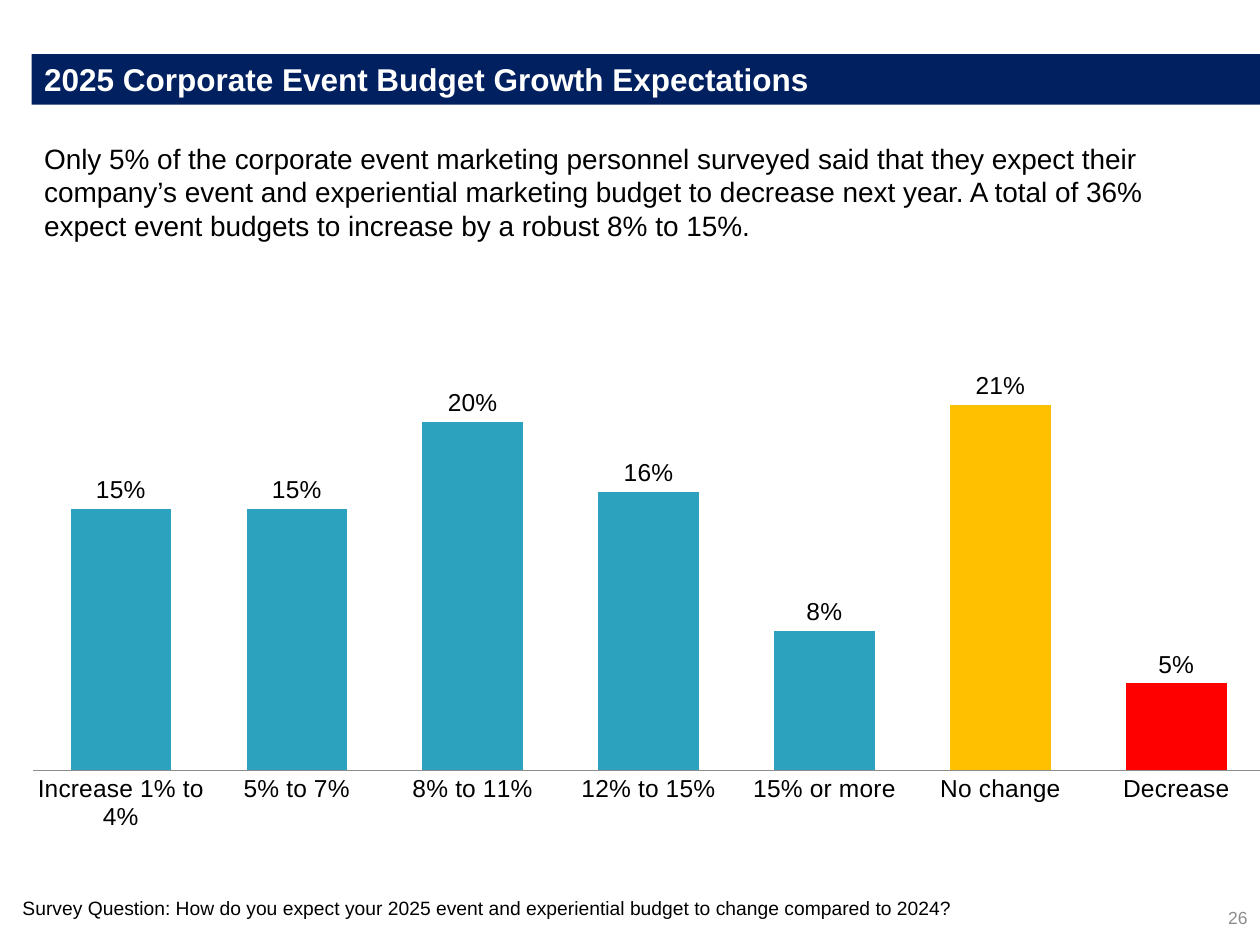
"""Build the slide on 2025 corporate event budget growth expectations."""
from dataclasses import dataclass
from typing import Any

from lxml import etree
from pptx import Presentation
from pptx.chart.data import CategoryChartData
from pptx.dml.color import RGBColor
from pptx.enum.chart import XL_CHART_TYPE as ChartType
from pptx.enum.chart import XL_LABEL_POSITION as LabelPos
from pptx.enum.chart import XL_TICK_MARK as TickMark
from pptx.enum.text import MSO_ANCHOR as Anchor
from pptx.enum.text import MSO_AUTO_SIZE as AutoSize
from pptx.enum.text import PP_ALIGN as Align
from pptx.oxml.ns import qn
from pptx.util import Inches, Pt

NAVY = RGBColor(0x00, 0x20, 0x60)
WHITE = RGBColor(0xFF, 0xFF, 0xFF)
BLACK = RGBColor(0x00, 0x00, 0x00)
GRAY = RGBColor(0x8C, 0x8C, 0x8C)
TEAL = RGBColor(0x2D, 0xA2, 0xBF)
AMBER = RGBColor(0xFF, 0xC0, 0x00)
RED = RGBColor(0xFF, 0x00, 0x00)


@dataclass(frozen=True)
class Box:
    left: float
    top: float
    width: float
    height: float

    def lengths(self) -> tuple:
        return tuple(Inches(v) for v in (self.left, self.top, self.width, self.height))


@dataclass(frozen=True)
class TextSpec:
    text: str
    box: Box
    size: int
    color: RGBColor = BLACK
    bold: bool = False
    align: Align = Align.LEFT
    anchor: Anchor = Anchor.TOP
    spacing: float = 1.0


@dataclass(frozen=True)
class Bar:
    label: str
    share: float
    color: RGBColor = TEAL


TITLE = TextSpec("2025 Corporate Event Budget Growth Expectations",
                 Box(0.25, 0.43, 9.75, 0.4), 18, WHITE, bold=True, anchor=Anchor.MIDDLE)
BODY = TextSpec("Only 5% of the corporate event marketing personnel surveyed said that they "
                "expect their company’s event and experiential marketing budget to decrease "
                "next year. A total of 36% expect event budgets to increase by a robust "
                "8% to 15%.", Box(0.25, 1.07, 9.42, 0.91), 16)
NOTES = (
    TextSpec("26", Box(7.67, 7.08, 2.33, 0.4), 10, GRAY,
             align=Align.RIGHT, anchor=Anchor.MIDDLE),
    TextSpec("Survey Question: How do you expect your 2025 event and experiential budget "
             "to change compared to 2024?", Box(0.08, 7.05, 9.58, 0.28), 11, spacing=1.07),
)
CHART_BOX = Box(-0.04, 2, 10.08, 5.08)
PLOT = {"x": 0.03, "y": 0.13, "w": 0.97, "h": 0.68}
BARS = (
    Bar("Increase 1% to 4%", 0.15),
    Bar("5% to 7%", 0.15),
    Bar("8% to 11%", 0.20),
    Bar("12% to 15%", 0.16),
    Bar("15% or more", 0.08),
    Bar("No change", 0.21, AMBER),
    Bar("Decrease", 0.05, RED),
)


def apply(target: Any, **values: Any) -> None:
    for name, value in values.items():
        setattr(target, name, value)


def style_font(font: Any, size: int, color: RGBColor = BLACK, bold: bool = False) -> None:
    apply(font, name="Arial", size=Pt(size), bold=bold)
    font.color.rgb = color


def fill_text(sp: Any, spec: TextSpec) -> None:
    left, top, width, height = spec.box.lengths()
    apply(sp, left=left, top=top, width=width, height=height)
    tf = sp.text_frame
    apply(tf, word_wrap=True, auto_size=AutoSize.NONE, vertical_anchor=spec.anchor)
    p = tf.paragraphs[0]
    apply(p, alignment=spec.align, line_spacing=spec.spacing, space_before=Pt(0))
    r = p.add_run()
    r.text = spec.text
    style_font(r.font, spec.size, spec.color, spec.bold)


def remove_bullet(p: Any) -> None:
    ppr = p._p.get_or_add_pPr()
    ppr.set("marL", "0")
    ppr.set("indent", "0")
    etree.SubElement(ppr, qn("a:buNone"))


def place_plot(chart: Any, plot: dict[str, float]) -> None:
    area = chart._chartSpace.chart.plotArea
    for old in area.findall(qn("c:layout")):
        area.remove(old)
    layout = etree.Element(qn("c:layout"))
    area.insert(0, layout)
    manual = etree.SubElement(layout, qn("c:manualLayout"))
    settings = {"layoutTarget": "inner", "xMode": "edge", "yMode": "edge", **plot}
    for tag, value in settings.items():
        etree.SubElement(manual, qn(f"c:{tag}")).set("val", str(value))


def add_bar_chart(s: Any, box: Box, bars: tuple[Bar, ...]) -> None:
    data = CategoryChartData(number_format="0%")
    data.categories = [bar.label for bar in bars]
    data.add_series("Series 1", [bar.share for bar in bars])
    chart = s.shapes.add_chart(ChartType.COLUMN_CLUSTERED, *box.lengths(), data).chart
    apply(chart, has_legend=False, has_title=False)
    apply(chart.font, name="Calibri", size=Pt(12))
    chart.font.color.rgb = BLACK
    place_plot(chart, PLOT)

    apply(chart.value_axis, visible=False, has_major_gridlines=False,
          minimum_scale=0, maximum_scale=0.25)
    axis = chart.category_axis
    apply(axis, major_tick_mark=TickMark.NONE, minor_tick_mark=TickMark.NONE)
    axis.format.line.color.rgb = GRAY
    axis.format.line.width = Pt(0.75)
    style_font(axis.tick_labels.font, 14)

    plot = chart.plots[0]
    apply(plot, gap_width=75, overlap=-25, vary_by_categories=False, has_data_labels=True)
    apply(plot.data_labels, show_value=True, number_format="0%",
          number_format_is_linked=False, position=LabelPos.OUTSIDE_END)
    style_font(plot.data_labels.font, 14)
    series = plot.series[0]
    series.format.fill.solid()
    series.format.fill.fore_color.rgb = TEAL
    for i, bar in enumerate(bars):
        if bar.color != TEAL:
            fill = series.points[i].format.fill
            fill.solid()
            fill.fore_color.rgb = bar.color


def main() -> None:
    prs = Presentation()
    apply(prs, slide_width=Inches(10), slide_height=Inches(7.5))
    s = prs.slides.add_slide(prs.slide_layouts[1])
    title, body = s.shapes.title, s.placeholders[1]
    fill_text(title, TITLE)
    title.fill.solid()
    title.fill.fore_color.rgb = NAVY
    fill_text(body, BODY)
    remove_bullet(body.text_frame.paragraphs[0])
    for note in NOTES:
        fill_text(s.shapes.add_textbox(*note.box.lengths()), note)
    add_bar_chart(s, CHART_BOX, BARS)
    prs.save("out.pptx")


if __name__ == "__main__":
    main()
